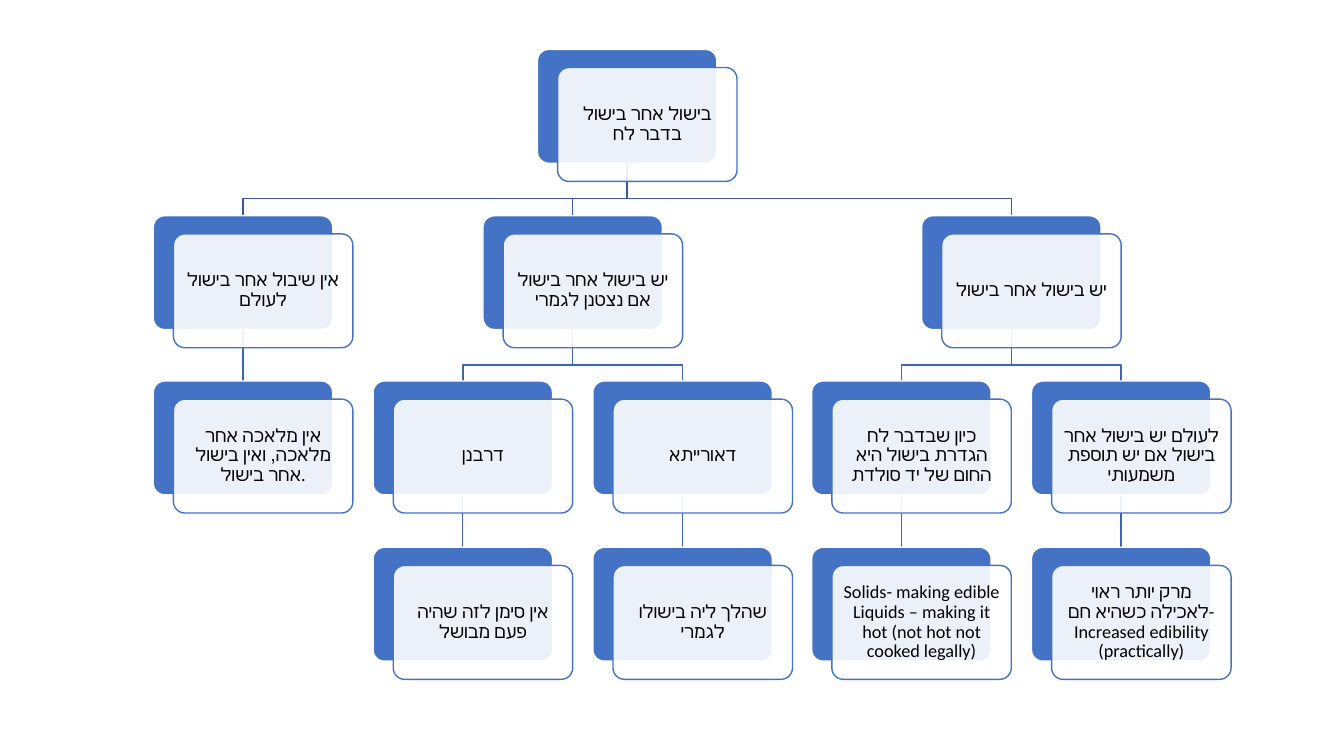
from lxml import etree
from pptx import Presentation
from pptx.dml.color import RGBColor
from pptx.enum.shapes import MSO_CONNECTOR, MSO_SHAPE
from pptx.enum.text import MSO_ANCHOR, PP_ALIGN
from pptx.oxml.ns import qn
from pptx.util import Pt

STRAIGHT = MSO_CONNECTOR.STRAIGHT
ROUNDED = MSO_SHAPE.ROUNDED_RECTANGLE
MIDDLE = MSO_ANCHOR.MIDDLE
CENTER = PP_ALIGN.CENTER

BLUE = RGBColor(0x44, 0x72, 0xC4)
ROOT_LINE = RGBColor(0x36, 0x5B, 0x9D)
BRANCH_LINE = RGBColor(0x3E, 0x67, 0xB2)
WHITE = RGBColor(0xFF, 0xFF, 0xFF)
BLACK = RGBColor(0x00, 0x00, 0x00)

PX = 9144  # 100 px to the inch
LEFT, TOP = 152, 49
COLUMN_STEP, ROW_STEP = 217.75, 164.75
CARD_WIDTH, CARD_HEIGHT = 178, 113
CARD_SHIFT_X, CARD_SHIFT_Y = 20, 18
BEND_DROP = 35

# Each node is (text, children); the leaves fill the columns from left to right
TREE = ("בישול אחר בישול בדבר לח", [
    ("אין שיבול אחר בישול לעולם", [
        ("אין מלאכה אחר מלאכה, ואין בישול אחר בישול.", []),
    ]),
    ("יש בישול אחר בישול אם נצטנן לגמרי", [
        ("דרבנן", [("אין סימן לזה שהיה פעם מבושל", [])]),
        ("דאורייתא", [("שהלך ליה בישולו לגמרי", [])]),
    ]),
    ("יש בישול אחר בישול", [
        ("כיון שבדבר לח הגדרת בישול היא החום של יד סולדת", [
            ("Solids- making edible\n"
             "Liquids – making it hot (not hot not cooked legally)", []),
        ]),
        ("לעולם יש בישול אחר בישול אם יש תוספת משמעותי", [
            ("מרק יותר ראוי לאכילה כשהיא חם- Increased edibility (practically)", []),
        ]),
    ]),
])


class TreeSlide:
    font_name = "Calibri"
    font_size = Pt(13)
    line_width = Pt(1)

    def __init__(self, slide):
        self.slide = slide
        self.shapes = slide.shapes
        self.next_column = 0

    def rounded_box(self, left, top, fill, line):
        box = self.shapes.add_shape(
            ROUNDED, left * PX, top * PX, CARD_WIDTH * PX, CARD_HEIGHT * PX)
        box.adjustments[0] = 0.1
        box.shadow.inherit = False
        box.fill.solid()
        box.fill.fore_color.rgb = fill
        box.line.color.rgb = line
        box.line.width = self.line_width
        return box

    def card(self, text, left, top):
        """Add a blue back plate with a translucent text card over it."""
        plate = self.rounded_box(left, top, BLUE, WHITE)
        card = self.rounded_box(left + CARD_SHIFT_X, top + CARD_SHIFT_Y, WHITE, BLUE)
        color = card.fill._xPr.find(qn("a:solidFill"))[0]
        etree.SubElement(color, qn("a:alpha"), val="90000")

        frame = card.text_frame
        frame.word_wrap = True
        frame.vertical_anchor = MIDDLE
        frame.margin_left = frame.margin_right = 5 * PX
        frame.margin_top = frame.margin_bottom = 5 * PX
        paragraph = frame.paragraphs[0]
        paragraph.text = text
        paragraph.alignment = CENTER
        paragraph.line_spacing = 0.9
        paragraph.font.name = self.font_name
        paragraph.font.size = self.font_size
        paragraph.font.color.rgb = BLACK
        return plate

    def straight_link(self, parent, child):
        link = self.shapes.add_connector(STRAIGHT, 0, 0, 0, 0)
        link.begin_connect(parent, 2)
        link.end_connect(child, 0)
        etree.SubElement(link._element.spPr, qn("a:effectLst"))
        return link

    def bent_link(self, parent, child):
        start_x = parent.left + parent.width // 2
        start_y = parent.top + parent.height
        end_x = child.left + child.width // 2
        bend_y = start_y + BEND_DROP * PX
        builder = self.shapes.build_freeform(start_x, start_y)
        builder.add_line_segments(
            [(start_x, bend_y), (end_x, bend_y), (end_x, child.top)], close=False)
        link = builder.convert_to_shape()
        link.fill.background()
        link.shadow.inherit = False
        return link

    def link(self, parent, child, color):
        same_column = parent.left == child.left
        link = (self.straight_link if same_column else self.bent_link)(parent, child)
        link.line.color.rgb = color
        link.line.width = self.line_width
        # Links lie behind all cards
        self.shapes._spTree.insert(2, link._element)

    def branch(self, node, level=0):
        """Draw a node over its children; return its plate and column."""
        text, children = node
        branches = [self.branch(child, level + 1) for child in children]
        if branches:
            column = (branches[0][1] + branches[-1][1]) / 2
        else:
            column = self.next_column
            self.next_column += 1
        plate = self.card(text, round(LEFT + COLUMN_STEP * column),
                          round(TOP + ROW_STEP * level))
        color = BRANCH_LINE if level else ROOT_LINE
        for child_plate, _ in branches:
            self.link(plate, child_plate, color)
        return plate, column


def main():
    presentation = Presentation()
    presentation.slide_width = 1333 * PX
    presentation.slide_height = 750 * PX
    slide = presentation.slides.add_slide(presentation.slide_layouts[6])
    TreeSlide(slide).branch(TREE)
    presentation.save("out.pptx")


if __name__ == "__main__":
    main()
